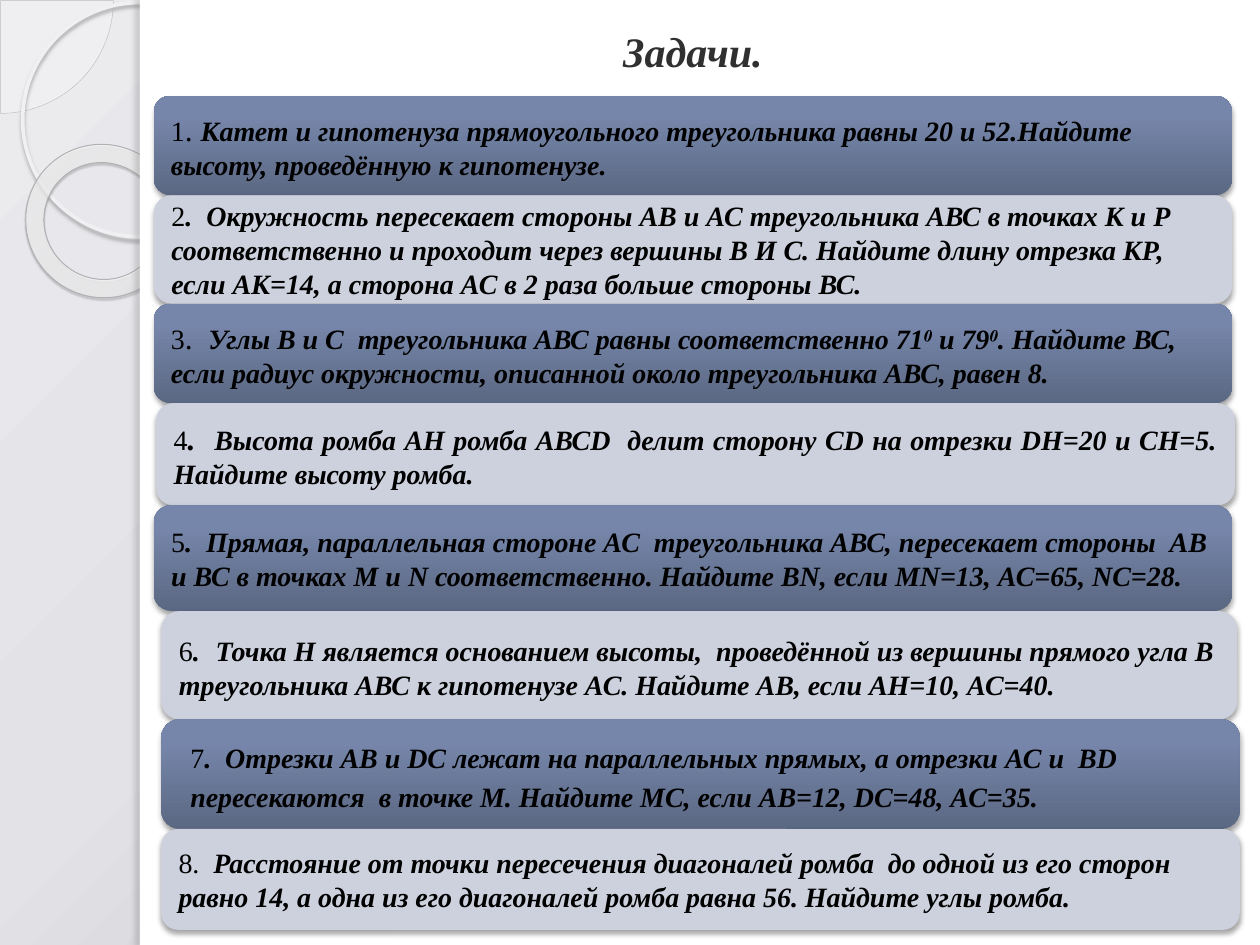
import itertools
from dataclasses import dataclass

import pptx
import pptx.dml.color
import pptx.enum.shapes
import pptx.enum.text
import pptx.oxml
import pptx.oxml.ns
import pptx.util

Inches = pptx.util.Inches
Pt = pptx.util.Pt
SHAPE = pptx.enum.shapes.MSO_SHAPE
ALIGN = pptx.enum.text.PP_ALIGN
MIDDLE = pptx.enum.text.MSO_ANCHOR.MIDDLE


@dataclass(frozen=True)
class Theme:
    """Colours, gradients, shadows and type sizes of the slide."""
    font: str = "Times New Roman"
    title_size: int = 24
    body_size: int = 16
    gap_size: int = 18
    title: str = "303030"
    text: str = "000000"
    white: str = "FFFFFF"
    pale_card: str = "CCD1DD"
    pie: str = "F9F9FA"
    pie_line: str = "BDBDC1"
    ring_line: str = "F0F0F3"
    donut_line: str = "B1B1B4"
    dark_card: tuple = ((0, "5B6883", 100), (80, "7686AA", 100), (100, "7687AB", 100))
    backdrop: tuple = ((0, "EBEBEE", 100), (40, "E2E2E7", 100), (100, "AAAAAE", 100))
    donut: tuple = ((0, "FBFBFB", 70), (70, "FDFDFD", 55), (100, "C2C2C8", 60))
    card_shadow: tuple = ("000000", 35, 3.1, 1.8, 90)
    ring_shadow: tuple = ("A4A4A6", 85, 2, 2, 90)
    donut_shadow: tuple = ("515153", 35, 1, 1.2, 75)
    edge_shadow: tuple = ("6E6E6F", 25, 3, 3, 180)


THEME = Theme()
B, G = THEME.body_size, THEME.gap_size

TASKS = [
    dict(height=0.79, runs=[
        ("1", B, False), (". ", G, False),
        ("Катет и гипотенуза прямоугольного треугольника равны 20 и 52.Найдите "
         "высоту, проведённую к гипотенузе.", B, True)]),
    dict(height=0.86, runs=[
        ("2", B, False),
        (".  Окружность пересекает стороны АВ и АС треугольника АВС в точках К и Р "
         "соответственно и проходит через вершины В И С. Найдите длину отрезка КР, "
         "если АК=14, а сторона АС в 2 раза больше стороны ВС.", B, True)]),
    dict(height=0.79, runs=[
        ("3", B, False), (".  ", G, False),
        ("Углы В и С  треугольника АВС равны соответственно 71⁰ и 79⁰. Найдите ВС, "
         "если радиус окружности, описанной около треугольника АВС, равен 8.", B, True)]),
    dict(height=0.81, left=1.24, align=ALIGN.JUSTIFY, runs=[
        ("4", B, False), (".  ", G, True),
        ("Высота ромба АН ромба АВСD  делит сторону СD на отрезки DH=20 и СН=5. "
         "Найдите высоту ромба.", B, True)]),
    dict(height=0.84, runs=[
        ("5", B, False),
        (".  Прямая, параллельная стороне АС  треугольника АВС, пересекает стороны  АВ "
         "и ВС в точках M и N соответственно. Найдите BN, если MN=13, АС=65, NC=28.", B, True)]),
    dict(height=0.86, left=1.28, width=8.54, runs=[
        ("6", B, False), (".", B, True), ("  ", G, True),
        ("Точка Н является основанием высоты,  проведённой из вершины прямого угла В "
         "треугольника АВС к гипотенузе АС. Найдите АВ, если АН=10, АС=40.", B, True)]),
    dict(height=0.87, left=1.28, indent=0.09, line_spacing=1.15, after=10, runs=[
        ("7", B, False),
        (".  Отрезки АВ и DC лежат на параллельных прямых, а отрезки АС и  BD "
         "пересекаются  в точке М. Найдите МС, если АВ=12, DC=48, АС=35.", B, True)]),
    dict(height=0.8, left=1.28, after=2, runs=[
        ("8.  ", B, False),
        ("Расстояние от точки пересечения диагоналей ромба  до одной из его сторон "
         "равно 14, а одна из его диагоналей ромба равна 56. Найдите углы ромба.", B, True)]),
]


def rgb(value):
    """Return a colour object for a hex value."""
    return pptx.dml.color.RGBColor.from_string(value)


def element(xml):
    """Parse one drawing element that has attributes, given without its namespace."""
    tag, _, rest = xml.partition(" ")
    return pptx.oxml.parse_xml(f"{tag} {pptx.oxml.ns.nsdecls('a')} {rest}")


def color_xml(value, opacity):
    """Return the XML of a colour with an opacity in percent."""
    return f'<a:srgbClr val="{value}"><a:alpha val="{opacity * 1000}"/></a:srgbClr>'


def set_gradient(fill, parent, stops, focus=None):
    """Fill upwards from the bottom, or in circles around a focus rectangle."""
    fill.solid()
    stops_xml = "".join(f'<a:gs pos="{at * 1000}">{color_xml(value, opacity)}</a:gs>'
                        for at, value, opacity in stops)
    shade = '<a:lin ang="16200000" scaled="0"/>'
    if focus:
        sides = " ".join(f'{side}="{share * 1000}"' for side, share in zip("ltrb", focus))
        shade = f'<a:path path="circle"><a:fillToRect {sides}/></a:path>'
    solid = parent.find(pptx.oxml.ns.qn("a:solidFill"))
    parent.replace(solid, element(
        f'<a:gradFill rotWithShape="1"><a:gsLst>{stops_xml}</a:gsLst>{shade}</a:gradFill>'))


def add_panel(slide, kind, box, fill=None, opacity=100, line=None, shadow=None):
    """Add a preset shape with plain fill, outline and shadow."""
    panel = slide.shapes.add_shape(kind, *map(Inches, box))
    panel.shadow.inherit = False
    properties = panel._element.spPr
    if fill:
        panel.fill.solid()
        panel.fill.fore_color.rgb = rgb(fill)
        color = properties.find(".//" + pptx.oxml.ns.qn("a:srgbClr"))
        color.append(element(f'<a:alpha val="{opacity * 1000}"/>'))
    else:
        panel.fill.background()
    if line:
        panel.line.color.rgb = rgb(line[0])
        panel.line.width = Pt(line[1])
    else:
        panel.line.fill.background()
    if shadow:
        value, strength, blur, distance, angle = shadow
        effects = properties.find(pptx.oxml.ns.qn("a:effectLst"))
        effects.append(element(
            f'<a:outerShdw blurRad="{Pt(blur)}" dist="{Pt(distance)}" dir="{angle * 60000}" '
            f'algn="tl" rotWithShape="0">{color_xml(value, strength)}</a:outerShdw>'))
    return panel


def add_run(paragraph, text, size, emphasis, color):
    """Add one run, bold italic when emphasised."""
    run = paragraph.add_run()
    run.text = text
    run.font.name = THEME.font
    run.font.size = Pt(size)
    run.font.bold = run.font.italic = emphasis
    run.font.color.rgb = rgb(color)


def add_backdrop(slide, left, top, width, height):
    """Draw the shaded background, the rings and the white page in the box."""
    background = slide.background.fill
    set_gradient(background, background._xPr, THEME.backdrop, (-24, -20, 124, 120))
    pie = add_panel(slide, SHAPE.PIE, (left - 0.89, top - 0.89, 1.79, 1.79),
                    THEME.pie, 33, (THEME.pie_line, 0.25))
    pie.adjustments[0], pie.adjustments[1] = 0, 54.02
    add_panel(slide, SHAPE.OVAL, (left + 0.18, top + 0.02, 1.86, 1.86),
              line=(THEME.ring_line, 2.15), shadow=THEME.ring_shadow)
    donut = add_panel(slide, SHAPE.DONUT, (left + 0.2, top + 1.15, 1.23, 1.21),
                      line=(THEME.donut_line, 0.58), shadow=THEME.donut_shadow)
    donut.adjustments[0] = 0.12
    donut.rotation = 38.6
    set_gradient(donut.fill, donut._element.spPr, THEME.donut, (-408, -50, 508, 150))
    margin = 1.11
    add_panel(slide, SHAPE.RECTANGLE, (left + margin, top, width - margin, height), THEME.white)
    add_panel(slide, SHAPE.RECTANGLE, (left + margin, top, 0.08, height), THEME.white,
              shadow=THEME.edge_shadow)


def add_title(slide, left, top, width, height):
    """Place the title placeholder in the box, in front of the backdrop."""
    title = slide.shapes.title
    title.left, title.top, title.width, title.height = map(Inches, (left, top, width, height))
    title.text_frame.vertical_anchor = MIDDLE
    heading = title.text_frame.paragraphs[0]
    heading.alignment = ALIGN.CENTER
    add_run(heading, "Задачи.", THEME.title_size, True, THEME.title)
    slide.shapes._spTree.append(title._element)


def add_task(slide, left, top, width, height, task, dark):
    """Draw one task card in the box."""
    card = add_panel(slide, SHAPE.ROUNDED_RECTANGLE, (left, top, width, height),
                     THEME.pale_card, shadow=THEME.card_shadow)
    if dark:
        set_gradient(card.fill, card._element.spPr, THEME.dark_card)
    card.text_frame.word_wrap = True
    card.text_frame.vertical_anchor = MIDDLE
    wording = card.text_frame.paragraphs[0]
    wording.alignment = task.get("align", ALIGN.LEFT)
    wording.line_spacing = task.get("line_spacing")
    wording.space_after = Pt(task.get("after", 0))
    wording._p.get_or_add_pPr().set("marL", str(Inches(task.get("indent", 0))))
    for text, size, emphasis in task["runs"]:
        add_run(wording, text, size, emphasis, THEME.text)


def add_tasks(slide, left, top, width):
    """Stack the task cards without gaps, dark and pale in turn."""
    offsets = itertools.accumulate((task["height"] for task in TASKS), initial=top)
    for number, (task, card_top) in enumerate(zip(TASKS, offsets)):
        add_task(slide, task.get("left", left), card_top, task.get("width", width),
                 task["height"], task, number % 2 == 0)


def main():
    """Build the slide and save it."""
    deck = pptx.Presentation()
    deck.slide_width, deck.slide_height = Inches(10), Inches(7.5)
    slide = deck.slides.add_slide(deck.slide_layouts[5])
    add_backdrop(slide, 0, 0, 10, 7.5)
    add_title(slide, 1.4, 0.13, 8.2, 0.54)
    add_tasks(slide, 1.22, 0.76, 8.56)
    deck.save("out.pptx")


if __name__ == "__main__":
    main()
